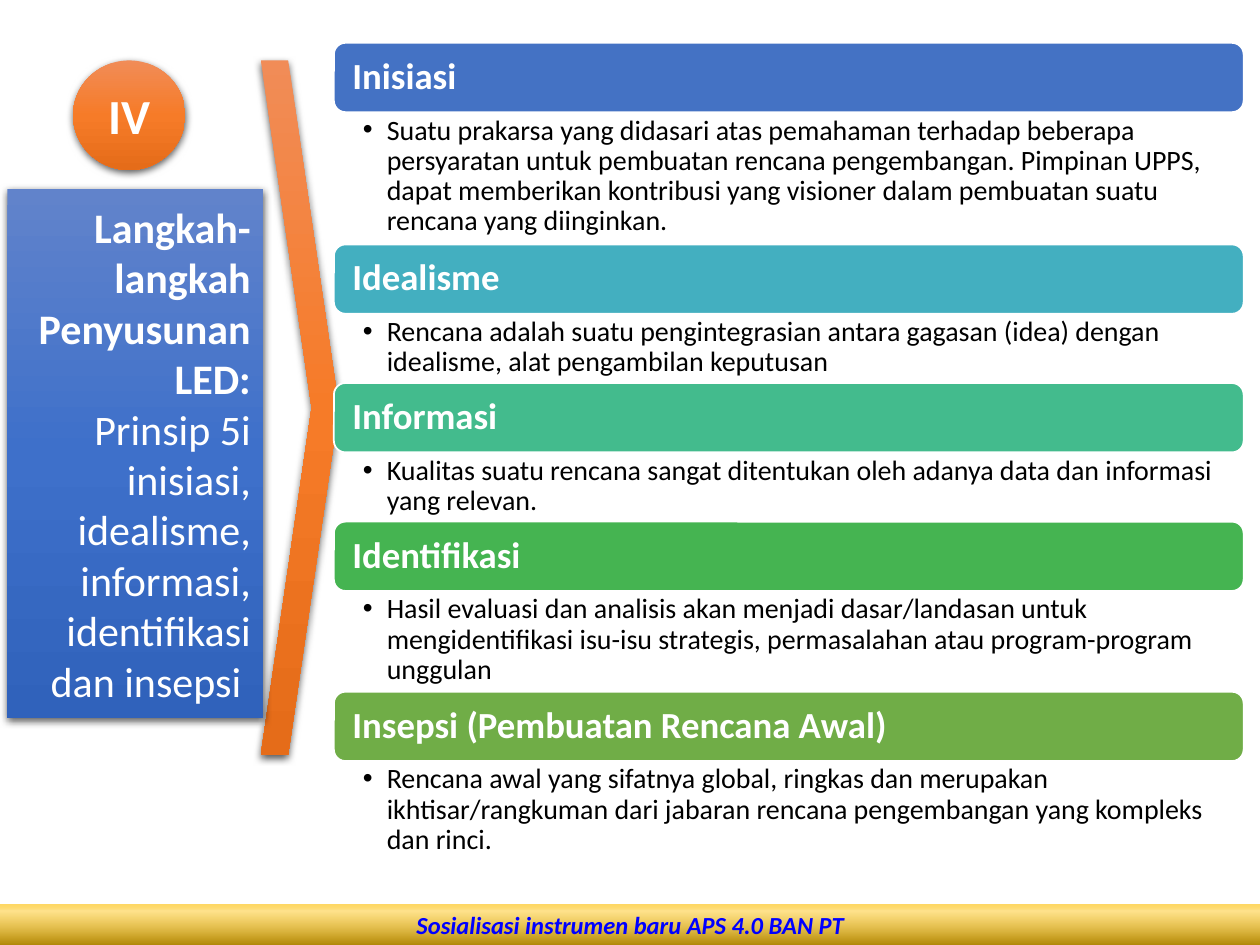
import lxml.etree
import pptx
import pptx.dml.color
import pptx.enum.shapes
import pptx.enum.text
import pptx.oxml.ns
import pptx.util

SHAPES = pptx.enum.shapes.MSO_SHAPE
ALIGN = pptx.enum.text.PP_ALIGN
ANCHOR = pptx.enum.text.MSO_ANCHOR
COLUMNS, ROWS = 100, 75
CELL = pptx.util.Inches(0.1)
ORANGE = [(0, "F18C57", 100), (50, "F67B28", 100), (100, "E56C19", 100)]
BLUE = [(0, "6183CB", 100), (50, "3E70CA", 100), (100, "3062BB", 100)]
GOLD = [(0, "AB8100", 100), (83, "FFC208", 46), (100, "FFD966", 100)]
BAR_ROWS = 5.5
STEPS = [
    ("Inisiasi", "4472C4", 10.5,
     "Suatu prakarsa yang didasari atas pemahaman terhadap beberapa persyaratan untuk "
     "pembuatan rencana pengembangan. Pimpinan UPPS, dapat memberikan kontribusi yang "
     "visioner dalam pembuatan suatu rencana yang diinginkan."),
    ("Idealisme", "43AFC0", 5.5,
     "Rencana adalah suatu pengintegrasian antara gagasan (idea) dengan idealisme, "
     "alat pengambilan keputusan"),
    ("Informasi", "43BB8D", 5.5,
     "Kualitas suatu rencana sangat ditentukan oleh adanya data dan informasi yang relevan."),
    ("Identifikasi", "45B451", 8,
     "Hasil evaluasi dan analisis akan menjadi dasar/landasan untuk mengidentifikasi "
     "isu-isu strategis, permasalahan atau program-program unggulan"),
    ("Insepsi (Pembuatan Rencana Awal)", "70AD47", 8,
     "Rencana awal yang sifatnya global, ringkas dan merupakan ikhtisar/rangkuman dari "
     "jabaran rencana pengembangan yang kompleks dan rinci."),
]


def color(value):
    """Turn a hex string into a colour."""
    return pptx.dml.color.RGBColor.from_string(value)


def place(box):
    """Turn a box in grid columns and rows into slide lengths."""
    return [round(length * CELL) for length in box]


def add_element(parent, tag, **attributes):
    """Append a drawing element with its attributes."""
    values = {name: str(value) for name, value in attributes.items()}
    return lxml.etree.SubElement(parent, pptx.oxml.ns.qn(tag), values)


def add_color(parent, value, opacity):
    """Append a colour with an opacity in percent."""
    element = add_element(parent, "a:srgbClr", val=value)
    if opacity < 100:
        add_element(element, "a:alpha", val=opacity * 1000)


def add_block(slide, kind, box, fill, line=None, width=1):
    """Add a flat shape with a plain or gradient fill."""
    shape = slide.shapes.add_shape(kind, *place(box))
    shape.shadow.inherit = False
    if isinstance(fill, str):
        shape.fill.solid()
        shape.fill.fore_color.rgb = color(fill)
    else:
        shape.fill.gradient()
        stops = shape._element.spPr.find(".//" + pptx.oxml.ns.qn("a:gsLst"))
        stops.clear()
        for position, value, opacity in fill:
            add_color(add_element(stops, "a:gs", pos=position * 1000), value, opacity)
        shape.fill.gradient_angle = 270
    if line:
        shape.line.color.rgb = color(line)
        shape.line.width = pptx.util.Pt(width)
    else:
        shape.line.fill.background()
    return shape


def add_shadow(shape):
    """Give a shape a soft shadow below it."""
    effects = shape._element.spPr.find(pptx.oxml.ns.qn("a:effectLst"))
    shadow = add_element(effects, "a:outerShdw", blurRad=pptx.util.Pt(4.5),
                         dist=pptx.util.Pt(1.5), dir=5400000, rotWithShape=0)
    add_color(shadow, "000000", 63)


def set_insets(frame, left, top, right, bottom):
    """Set the text margins in grid cells."""
    frame.margin_left, frame.margin_top, frame.margin_right, frame.margin_bottom = place(
        (left, top, right, bottom))


def write(paragraph, text, size, value, align=ALIGN.LEFT, bold=False, italic=False):
    """Fill a paragraph with text in one style."""
    paragraph.text = text
    paragraph.alignment = align
    font = paragraph.font
    font.name, font.size, font.bold, font.italic = "Calibri", pptx.util.Pt(size), bold, italic
    font.color.rgb = color(value)


def add_footer(slide, box):
    """Add the gold band with the event name."""
    band = add_block(slide, SHAPES.RECTANGLE, box, GOLD, "FFFFFF", 0.75)
    band.fill.gradient_angle = 90
    band.text_frame.vertical_anchor = ANCHOR.MIDDLE
    write(band.text_frame.paragraphs[0], "Sosialisasi instrumen baru APS 4.0 BAN PT",
          14, "0000FF", ALIGN.CENTER, bold=True, italic=True)


def add_chevron(slide, box):
    """Add the tall chevron that points to the steps."""
    chevron = add_block(slide, SHAPES.CHEVRON, box, ORANGE)
    chevron.adjustments[0] = 0.65
    add_shadow(chevron)


def add_step(slide, box, title, fill, detail):
    """Add a titled bar with its bulleted detail below."""
    left, top, width, height = box
    bar = add_block(slide, SHAPES.ROUNDED_RECTANGLE, (left, top, width, BAR_ROWS), fill, "FFFFFF")
    bar.text_frame.vertical_anchor = ANCHOR.MIDDLE
    set_insets(bar.text_frame, 1.2, 0.9, 1.2, 0.9)
    heading = bar.text_frame.paragraphs[0]
    heading.line_spacing = 0.9
    write(heading, title, 21, "FFFFFF", bold=True)

    body = slide.shapes.add_textbox(
        *place((left, top + BAR_ROWS, width, height - BAR_ROWS))).text_frame
    body.word_wrap = True
    set_insets(body, 2.3, 0.3, 1.6, 0.3)
    paragraph = body.paragraphs[0]
    paragraph.line_spacing = 0.9
    properties = paragraph._p.get_or_add_pPr()
    indent = round(1.9 * CELL)
    properties.set("marL", str(indent))
    properties.set("indent", str(-indent))
    add_element(properties, "a:buFont", typeface="Arial")
    add_element(properties, "a:buChar", char="•")
    write(paragraph, detail, 16, "000000")


def add_steps(slide, box):
    """Stack the five steps from the top of the box."""
    left, top, width = box
    for title, fill, body_rows, detail in STEPS:
        height = BAR_ROWS + body_rows
        add_step(slide, (left, top, width, height), title, fill, detail)
        top += height


def add_topic(slide, box):
    """Add the blue panel that names the topic."""
    panel = add_block(slide, SHAPES.RECTANGLE, box, BLUE)
    add_shadow(panel)
    frame = panel.text_frame
    frame.word_wrap = True
    frame.vertical_anchor = ANCHOR.MIDDLE
    write(frame.paragraphs[0], "Langkah-langkah Penyusunan LED:", 24, "FFFFFF",
          ALIGN.RIGHT, bold=True)
    write(frame.add_paragraph(),
          "Prinsip 5i inisiasi, idealisme, informasi, identifikasi dan insepsi ",
          24, "FFFFFF", ALIGN.RIGHT)


def add_number(slide, box):
    """Add the round section number."""
    badge = add_block(slide, SHAPES.OVAL, box, ORANGE)
    add_shadow(badge)
    badge.text_frame.vertical_anchor = ANCHOR.MIDDLE
    write(badge.text_frame.paragraphs[0], "IV", 28, "FFFFFF", ALIGN.CENTER, bold=True)


def main():
    """Build and save the slide."""
    presentation = pptx.Presentation()
    presentation.slide_width, presentation.slide_height = place((COLUMNS, ROWS))
    slide = presentation.slides.add_slide(presentation.slide_layouts[6])
    add_footer(slide, (-0.1, 71.7, COLUMNS + 0.3, 3.4))
    add_chevron(slide, (20.7, 4.8, 6.2, 55.1))
    add_steps(slide, (26.5, 3.4, 72.2))
    add_topic(slide, (0.6, 15, 20.3, 42))
    add_number(slide, (5.8, 4.8, 8.9, 8.7))
    presentation.save("out.pptx")


if __name__ == "__main__":
    main()
